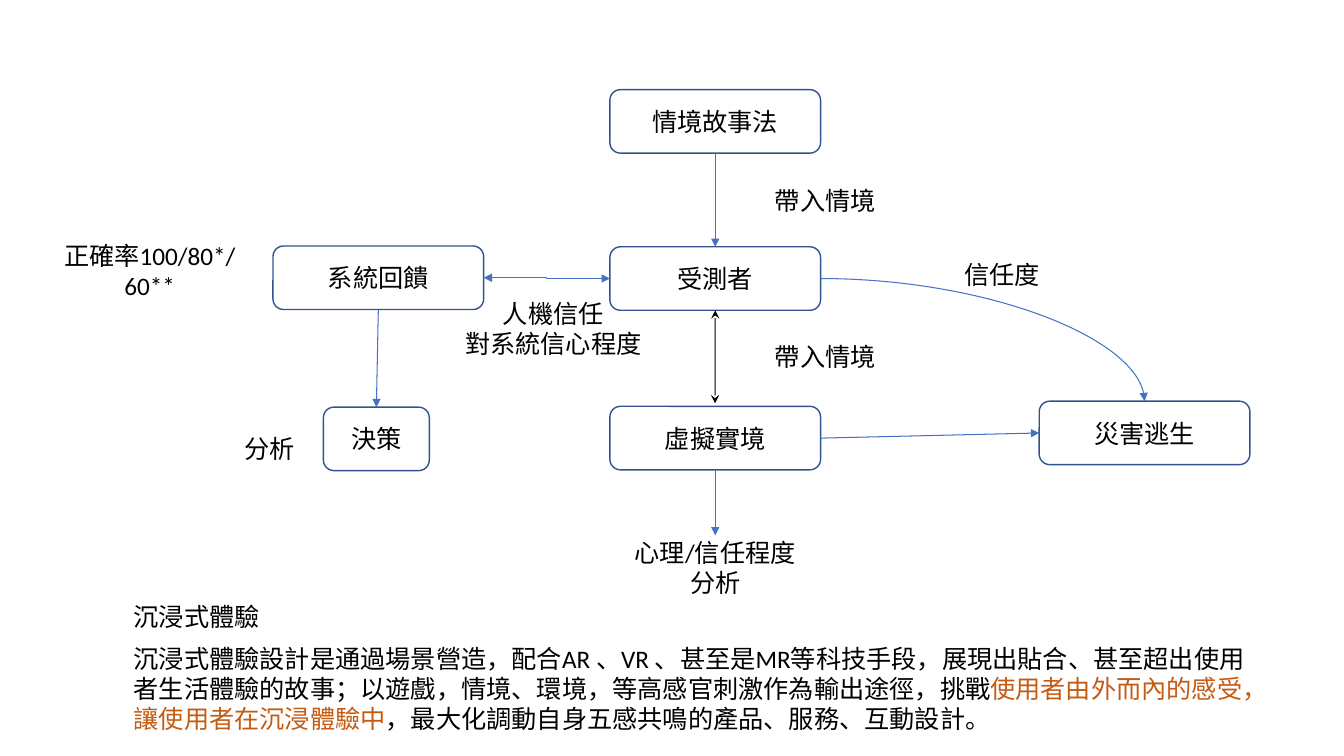
from lxml import etree
from pptx import Presentation
from pptx.dml.color import RGBColor
from pptx.enum.shapes import MSO_CONNECTOR, MSO_SHAPE
from pptx.enum.text import MSO_ANCHOR, MSO_AUTO_SIZE, PP_ALIGN
from pptx.oxml.ns import qn
from pptx.util import Cm, Pt

BLACK = RGBColor(0x00, 0x00, 0x00)
NAVY = RGBColor(0x31, 0x53, 0x8F)
BLUE = RGBColor(0x44, 0x72, 0xC4)
ORANGE = RGBColor(0xC5, 0x5A, 0x11)

ROUNDED = MSO_SHAPE.ROUNDED_RECTANGLE
STRAIGHT, ELBOW, CURVE = MSO_CONNECTOR.STRAIGHT, MSO_CONNECTOR.ELBOW, MSO_CONNECTOR.CURVE
LEFT, CENTER = PP_ALIGN.LEFT, PP_ALIGN.CENTER
MIDDLE = MSO_ANCHOR.MIDDLE
FIT_TEXT = MSO_AUTO_SIZE.SHAPE_TO_FIT_TEXT
TOP_SIDE, LEFT_SIDE, BOTTOM_SIDE, RIGHT_SIDE = range(4)

BOX_WIDTH, BOX_HEIGHT = 5.31, 1.6
MAIN_LEFT = 15.37          # left edge of the central column
MAIN_AXIS = 18.02          # its centre line


def add_run(paragraph, text, font="Calibri", size=18, color=BLACK):
    run = paragraph.add_run()
    run.text = text
    run.font.name = font
    run.font.size = Pt(size)
    run.font.color.rgb = color


class Diagram:
    def __init__(self, slide):
        self.shapes = slide.shapes

    def box(self, text, left, top, width=BOX_WIDTH, outline=NAVY):
        box = self.shapes.add_shape(ROUNDED, Cm(left), Cm(top), Cm(width), Cm(BOX_HEIGHT))
        box.shadow.inherit = False
        box.fill.background()
        if outline is None:
            box.line.fill.background()
        else:
            box.line.color.rgb = outline
            box.line.width = Pt(1)
        frame = box.text_frame
        frame.word_wrap = True
        frame.vertical_anchor = MIDDLE
        frame.paragraphs[0].alignment = CENTER
        add_run(frame.paragraphs[0], text)
        return box

    def text(self, paragraphs, left, top, width=4.8, height=1.03, align=LEFT):
        """Each paragraph is a list of (text, color) runs."""
        frame = self.shapes.add_textbox(Cm(left), Cm(top), Cm(width), Cm(height)).text_frame
        frame.word_wrap = True
        frame.auto_size = FIT_TEXT
        for index, runs in enumerate(paragraphs):
            paragraph = frame.add_paragraph() if index else frame.paragraphs[0]
            paragraph.alignment = align
            for text, color in runs:
                add_run(paragraph, text, color=color)

    def arrow(self, start, end, kind=STRAIGHT, color=BLUE, head=None, tail="triangle",
              preset=None):
        """start is (box, side); end is (box, side) or a point in cm."""
        glued = not isinstance(end[0], float)
        x, y = (0, 0) if glued else end
        link = self.shapes.add_connector(kind, 0, 0, Cm(x), Cm(y))
        link.begin_connect(*start)
        if glued:
            link.end_connect(*end)
        link.line.color.rgb = color
        link.line.width = Pt(0.75)
        properties = link._element.spPr
        if preset:
            properties.find(qn("a:prstGeom")).set("prst", preset)
        line = properties.find(qn("a:ln"))
        for tag, arrowhead in (("a:headEnd", head), ("a:tailEnd", tail)):
            if arrowhead:
                etree.SubElement(line, qn(tag)).set("type", arrowhead)
        etree.SubElement(properties, qn("a:effectLst"))


def main():
    deck = Presentation()
    deck.slide_width, deck.slide_height = Cm(33.87), Cm(19.05)
    diagram = Diagram(deck.slides.add_slide(deck.slide_layouts[6]))

    # Boxes of the flow
    story = diagram.box("情境故事法", MAIN_LEFT, 2.26)
    subject = diagram.box("受測者", MAIN_LEFT, 6.22)
    virtual = diagram.box("虛擬實境", MAIN_LEFT, 10.24)
    feedback = diagram.box("系統回饋", 6.88, 6.2)
    decision = diagram.box("決策", 8.15, 10.26, width=2.67)
    escape = diagram.box("災害逃生", 26.19, 10.11)

    # Outcomes and notes without an outline
    diagram.box("正確率100/80*/60**", 1.12, 6.02, outline=None)
    diagram.box("分析", 4.14, 10.49, outline=None)
    outcome = diagram.box("心理/信任程度分析", MAIN_LEFT, 13.49, outline=None)

    # Arrows
    diagram.arrow((story, BOTTOM_SIDE), (subject, TOP_SIDE))
    diagram.arrow((subject, BOTTOM_SIDE), (MAIN_AXIS, 10.16), color=BLACK,
                  head="stealth", tail="stealth")
    diagram.arrow((virtual, BOTTOM_SIDE), (outcome, TOP_SIDE))
    diagram.arrow((virtual, RIGHT_SIDE), (escape, LEFT_SIDE))
    diagram.arrow((feedback, BOTTOM_SIDE), (decision, TOP_SIDE))
    diagram.arrow((feedback, RIGHT_SIDE), (subject, LEFT_SIDE), kind=ELBOW, head="triangle")
    diagram.arrow((subject, RIGHT_SIDE), (escape, TOP_SIDE), kind=CURVE,
                  preset="curvedConnector2")

    # Arrow labels
    for top in (4.55, 8.48):
        diagram.text([[("帶入情境", BLACK)]], 19.28, top)
    diagram.text([[("信任度", BLACK)]], 24.05, 6.4)
    diagram.text([[("人機信任", BLACK)], [("對系統信心程度", BLACK)]], 10.82, 7.39,
                 width=6.25, height=1.8, align=CENTER)

    # Explanation
    diagram.text([[("沉浸式體驗", BLACK)]], 3.12, 15.04)
    diagram.text([[
        ("沉浸式體驗設計是通過場景營造，配合AR 、VR 、甚至是MR等科技手段，展現出貼合、"
         "甚至超出使用者生活體驗的故事；以遊戲，情境、環境，等高感官刺激作為輸出途徑，挑戰", BLACK),
        ("使用者由外而內的感受，讓使用者在沉浸體驗中", ORANGE),
        ("，最大化調動自身五感共鳴的產品、服務、互動設計。", BLACK),
    ]], 3.12, 16.08, width=28.75, height=2.57)

    deck.save("out.pptx")


if __name__ == "__main__":
    main()
